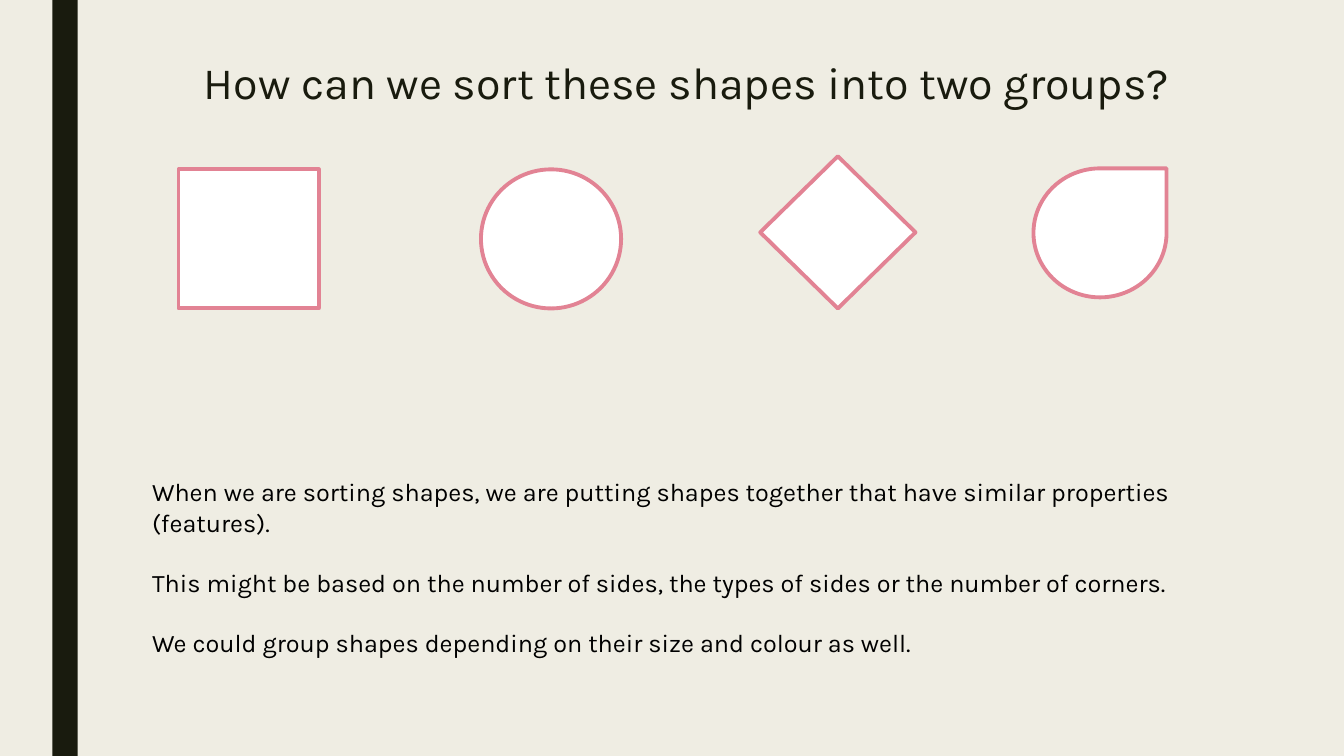
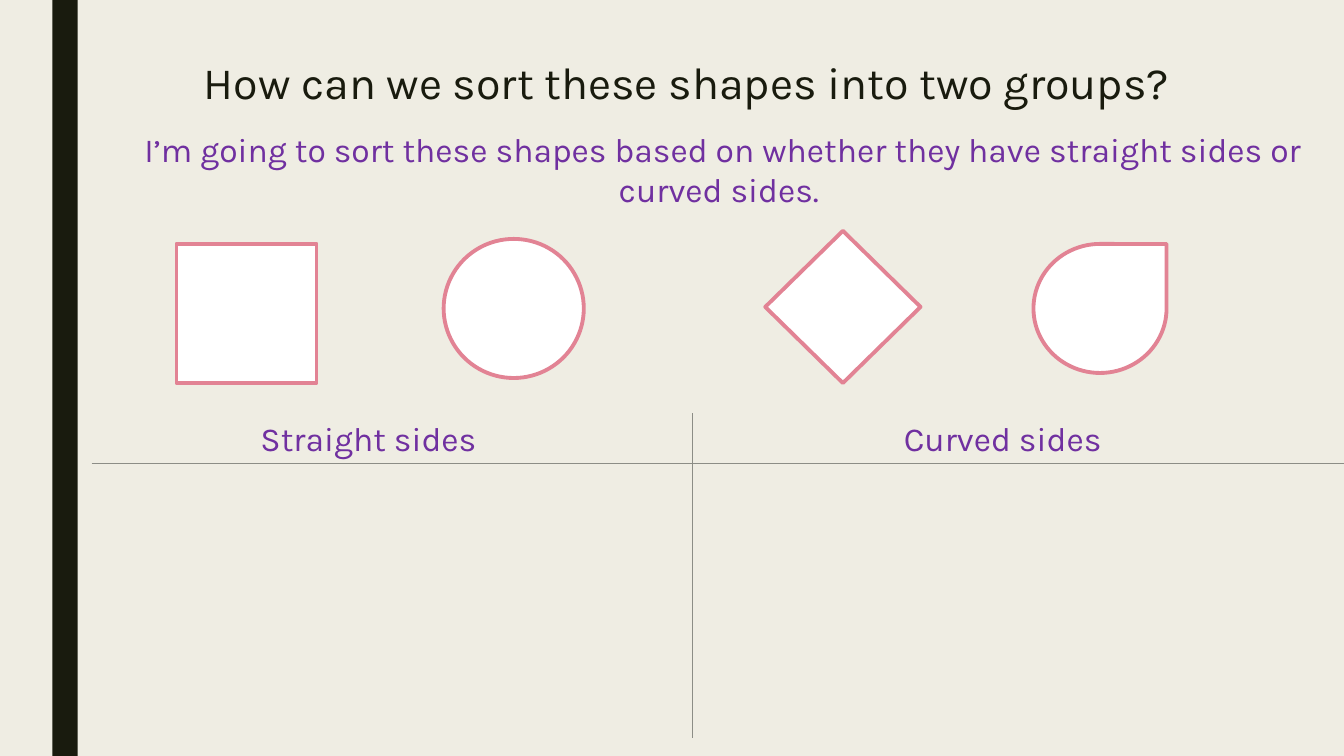
"""Build two slides about sorting shapes into groups."""
from dataclasses import dataclass

from pptx import Presentation
from pptx.dml.color import RGBColor
from pptx.enum.shapes import MSO_CONNECTOR, MSO_SHAPE as SHAPE
from pptx.enum.text import MSO_ANCHOR as ANCHOR, PP_ALIGN as ALIGN
from pptx.oxml.ns import qn
from pptx.slide import Slide
from pptx.util import Inches, Pt

FONT = "Karla"
CREAM = RGBColor(0xEF, 0xED, 0xE3)
INK = RGBColor(0x19, 0x1B, 0x0E)
BLACK = RGBColor(0x00, 0x00, 0x00)
WHITE = RGBColor(0xFF, 0xFF, 0xFF)
PINK = RGBColor(0xE2, 0x83, 0x94)
PURPLE = RGBColor(0x70, 0x30, 0xA0)
GREY = RGBColor(0x8C, 0x8D, 0x86)
SLIDE_W, SLIDE_H = 13.33, 7.5
TITLE = "How can we sort these shapes into two groups? "
PROPERTIES = (
    "When we are sorting shapes, we are putting shapes together that have similar properties (features).",
    "This might be based on the number of sides, the types of sides or the number of corners.",
    "We could group shapes depending on their size and colour as well.",
)
RULE = "I’m going to sort these shapes based on whether they have straight sides or curved sides. "


@dataclass(frozen=True)
class Figure:
    kind: SHAPE
    width: float
    height: float


@dataclass(frozen=True)
class Label:
    lines: tuple[str, ...]
    left: float
    top: float
    width: float
    height: float
    size: float = 24
    color: RGBColor = PURPLE
    align: ALIGN = ALIGN.CENTER
    anchor: ANCHOR = ANCHOR.TOP
    line_spacing: float = 1.0
    before: float = 0
    after: float = 0


FIGURES = (
    Figure(SHAPE.RECTANGLE, 1.39, 1.38),
    Figure(SHAPE.OVAL, 1.39, 1.38),
    Figure(SHAPE.DIAMOND, 1.54, 1.51),
    Figure(SHAPE.TEAR, 1.32, 1.28),
)
HEADING = Label((TITLE,), 1.22, 0.24, 11.3, 1.19, size=32, color=INK,
                anchor=ANCHOR.MIDDLE, line_spacing=0.94, before=10, after=2)
EXPLANATION = Label(PROPERTIES, 1.41, 4.68, 11.3, 1.62, size=18, color=BLACK,
                    align=ALIGN.LEFT, after=21.5)
SORTING_LABELS = (
    Label((RULE,), 1.12, 1.23, 12.1, 0.91),
    Label(("Straight sides",), 1.22, 4.1, 4.87, 0.5),
    Label(("Curved sides",), 7.51, 4.1, 4.87, 0.5),
)


def add_label(slide: Slide, label: Label) -> None:
    """Add a text box with one paragraph per line."""
    box = slide.shapes.add_textbox(Inches(label.left), Inches(label.top),
                                   Inches(label.width), Inches(label.height))
    tf = box.text_frame
    tf.word_wrap = True
    tf.vertical_anchor = label.anchor
    for i, line in enumerate(label.lines):
        p = tf.add_paragraph() if i else tf.paragraphs[0]
        p.alignment = label.align
        p.line_spacing = label.line_spacing
        p.space_before = Pt(label.before)
        p.space_after = Pt(label.after)
        r = p.add_run()
        r.text = line
        r.font.name = FONT
        r.font.size = Pt(label.size)
        r.font.color.rgb = label.color


def add_figures(slide: Slide, places: tuple[tuple[float, float], ...]) -> None:
    """Draw the four outlined figures at the given left and top places."""
    for figure, (left, top) in zip(FIGURES, places):
        sp = slide.shapes.add_shape(figure.kind, Inches(left), Inches(top),
                                    Inches(figure.width), Inches(figure.height))
        sp.shadow.inherit = False
        sp.fill.solid()
        sp.fill.fore_color.rgb = WHITE
        sp.line.color.rgb = PINK
        sp.line.width = Pt(2.75)


def add_rule(slide: Slide, x1: float, y1: float, x2: float, y2: float) -> None:
    """Draw a thin grey line."""
    line = slide.shapes.add_connector(MSO_CONNECTOR.STRAIGHT, Inches(x1), Inches(y1),
                                      Inches(x2), Inches(y2))
    line.line.color.rgb = GREY
    line.line.width = Pt(0.5)
    sp_pr = line._element.spPr
    sp_pr.append(sp_pr.makeelement(qn("a:effectLst"), {}))


def add_base_slide(prs: Presentation) -> Slide:
    """Add a slide with the side band and the title."""
    slide = prs.slides.add_slide(prs.slide_layouts[6])
    band = slide.shapes.add_shape(SHAPE.RECTANGLE, Inches(0.52), 0,
                                  Inches(0.25), Inches(SLIDE_H))
    band.shadow.inherit = False
    band.fill.solid()
    band.fill.fore_color.rgb = INK
    band.line.fill.background()
    add_label(slide, HEADING)
    return slide


def add_question_slide(prs: Presentation) -> None:
    """Add the slide that explains sorting by properties."""
    slide = add_base_slide(prs)
    add_figures(slide, ((1.77, 1.68), (4.77, 1.68), (7.54, 1.55), (10.25, 1.67)))
    add_label(slide, EXPLANATION)


def add_sorting_slide(prs: Presentation) -> None:
    """Add the slide with the empty two-column sorting chart."""
    slide = add_base_slide(prs)
    add_figures(slide, ((1.75, 2.42), (4.4, 2.37), (7.59, 2.29), (10.25, 2.42)))
    for label in SORTING_LABELS:
        add_label(slide, label)
    add_rule(slide, 0.91, 4.6, SLIDE_W, 4.6)
    add_rule(slide, 6.87, 4.1, 6.87, 7.32)


def main() -> None:
    """Build and save the presentation."""
    prs = Presentation()
    prs.slide_width, prs.slide_height = Inches(SLIDE_W), Inches(SLIDE_H)
    fill = prs.slide_master.background.fill
    fill.solid()
    fill.fore_color.rgb = CREAM
    add_question_slide(prs)
    add_sorting_slide(prs)
    prs.save("out.pptx")


if __name__ == "__main__":
    main()
